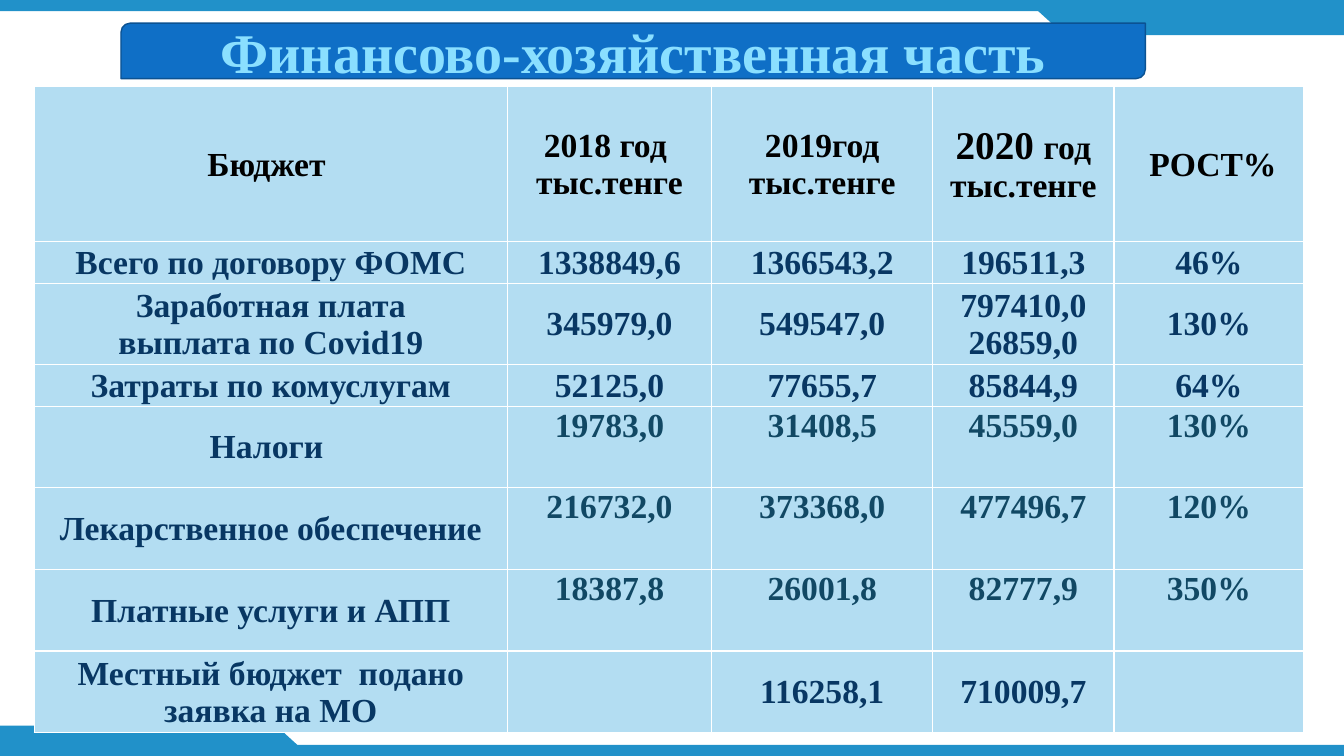
from dataclasses import dataclass

from lxml import etree
from pptx import Presentation
from pptx.dml.color import RGBColor
from pptx.enum.shapes import MSO_SHAPE
from pptx.enum.text import MSO_ANCHOR, PP_ALIGN
from pptx.oxml.ns import qn
from pptx.util import Pt

PX = 9144  # 100 px to the inch
RECT = MSO_SHAPE.RECTANGLE
MERGE = MSO_SHAPE.FLOWCHART_MERGE
DIAG = MSO_SHAPE.ROUND_2_DIAG_RECTANGLE
MIDDLE, TOP = MSO_ANCHOR.MIDDLE, MSO_ANCHOR.TOP
CENTER = PP_ALIGN.CENTER


@dataclass(frozen=True)
class Theme:
    font: str = "Times New Roman"
    band: str = "2191C9"
    banner: str = "0F6FC6"
    edge: str = "0B5292"
    title: str = "8ADFFF"
    cell: str = "B3DDF2"
    grid: str = "FFFFFF"
    head: str = "000000"
    navy: str = "083763"
    teal: str = "114864"
    title_size: int = 40
    year_size: int = 28
    text_size: int = 24


THEME = Theme()
WIDTH, HEIGHT = 1333, 750
COLS = [469, 203, 219, 180, 188]
ROWS = [154, 41, 81, 41, 81, 81, 81, 81]
BUDGET = [
    ["Бюджет ", "2018 год \nтыс.тенге", "2019год\nтыс.тенге",
     "2020 год\nтыс.тенге", " РОСТ%"],
    ["Всего по договору ФОМС", "1338849,6", "1366543,2", "196511,3", "46%"],
    ["Заработная плата\nвыплата по Covid19", "345979,0", "549547,0",
     "797410,0 26859,0", "130%"],
    ["Затраты по комуслугам", "52125,0", "77655,7", "85844,9", "64%"],
    ["Налоги ", "19783,0", "31408,5", "45559,0", "130%"],
    ["Лекарственное обеспечение", "216732,0", "373368,0", "477496,7", "120%"],
    ["Платные услуги и АПП", "18387,8", "26001,8", "82777,9", "350%"],
    ["Местный бюджет  подано заявка на МО", "", "116258,1", "710009,7", ""],
]
RAISED = (4, 5, 6)  # rows whose values sit at the top in teal


def px(*sizes):
    return [size * PX for size in sizes]


def rgb(code):
    return RGBColor.from_string(code)


def add_block(slide, kind, box, fill, edge=None):
    block = slide.shapes.add_shape(kind, *px(*box))
    block.shadow.inherit = False
    block.fill.solid()
    block.fill.fore_color.rgb = rgb(fill)
    if edge:
        block.line.color.rgb = rgb(edge)
        block.line.width = Pt(1)
    else:
        block.line.fill.background()
    return block


def style_text(frame, color, size):
    for para in frame.paragraphs:
        para.alignment = CENTER
        for run in para.runs:
            font = run.font
            font.name, font.size, font.bold = THEME.font, Pt(size), True
            font.color.rgb = rgb(color)


def add_frame(slide, box):
    """Edge bands with a slanted tab at two opposite corners."""
    left, top, width, height = box
    right, base = left + width, top + height
    band, tab, slant, deep = 11, 278, 66, 30
    for y in (top, base - band):
        add_block(slide, RECT, (left, y, width, band), THEME.band)
    # Upper right tab
    add_block(slide, RECT, (right - tab, top + 5, tab, deep), THEME.band)
    add_block(slide, MERGE, (right - tab - 33, top + 4, slant, deep), THEME.band)
    # Lower left tab
    low = base - deep
    add_block(slide, RECT, (left, low, tab - 4, deep), THEME.band)
    tip = add_block(slide, MERGE, (left + tab - 37, low, slant, deep), THEME.band)
    tip.rotation = 180


def add_banner(slide, box):
    banner = add_block(slide, DIAG, box, THEME.banner, THEME.edge)
    frame = banner.text_frame
    frame.text = "Финансово-хозяйственная часть"
    frame.word_wrap = True
    frame.vertical_anchor = MIDDLE
    style_text(frame, THEME.title, THEME.title_size)


def add_grid(cell):
    props = cell._tc.get_or_add_tcPr()
    for side in ("a:lnL", "a:lnR", "a:lnT", "a:lnB"):
        line = etree.SubElement(props, qn(side), w=str(Pt(1)))
        fill = etree.SubElement(line, qn("a:solidFill"))
        etree.SubElement(fill, qn("a:srgbClr"), val=THEME.grid)


def fill_cell(cell, text, color, anchor):
    add_grid(cell)
    cell.fill.solid()
    cell.fill.fore_color.rgb = rgb(THEME.cell)
    cell.vertical_anchor = anchor
    cell.margin_left = cell.margin_right = cell.margin_top = PX
    cell.margin_bottom = 0
    if text:
        cell.text_frame.text = text
        style_text(cell.text_frame, color, THEME.text_size)


def enlarge_year(cell):
    """Split the year from its unit and set it larger."""
    para = cell.text_frame.paragraphs[0]
    year = para.runs[0]
    number, unit = year.text.split()
    year.text = number + " "
    para.add_run().text = unit
    style_text(cell.text_frame, THEME.head, THEME.text_size)
    year.font.size = Pt(THEME.year_size)


def add_budget(slide, box):
    shape = slide.shapes.add_table(len(ROWS), len(COLS), *px(*box))
    table = shape.table
    table.first_row = table.horz_banding = False
    for col, width in zip(table.columns, COLS):
        col.width = width * PX
    for row, height in zip(table.rows, ROWS):
        row.height = height * PX
    for r, line in enumerate(BUDGET):
        for c, text in enumerate(line):
            raised = r in RAISED and c > 0
            color = THEME.teal if raised else THEME.navy
            if r == 0:
                color = THEME.head
            fill_cell(table.cell(r, c), text, color, TOP if raised else MIDDLE)
    enlarge_year(table.cell(0, 3))


def main():
    deck = Presentation()
    deck.slide_width, deck.slide_height = px(WIDTH, HEIGHT)
    slide = deck.slides.add_slide(deck.slide_layouts[6])
    add_frame(slide, (0, 0, WIDTH, HEIGHT))
    add_budget(slide, (34, 86, sum(COLS), sum(ROWS)))
    add_banner(slide, (120, 23, 1016, 55))
    deck.save("out.pptx")


if __name__ == "__main__":
    main()
